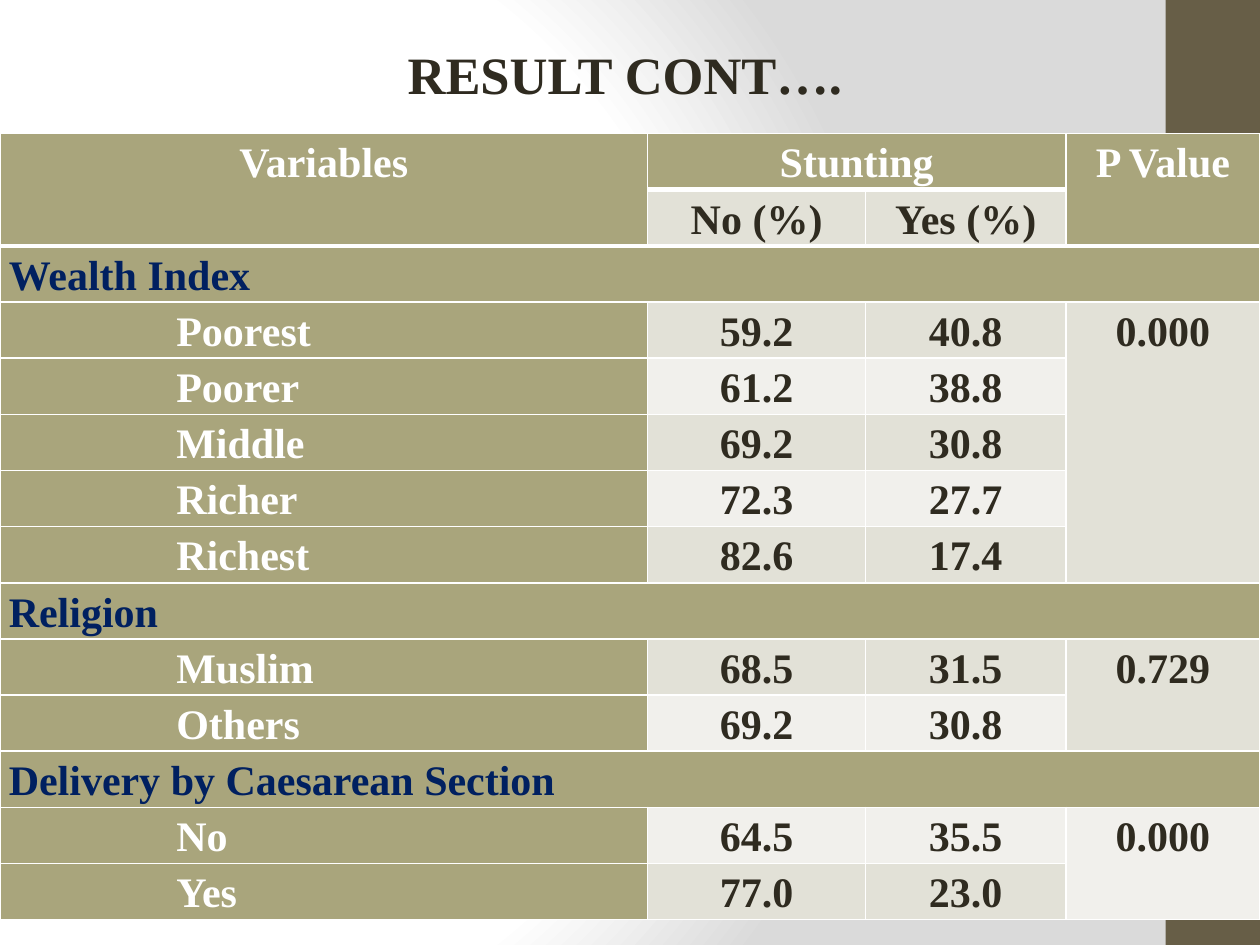
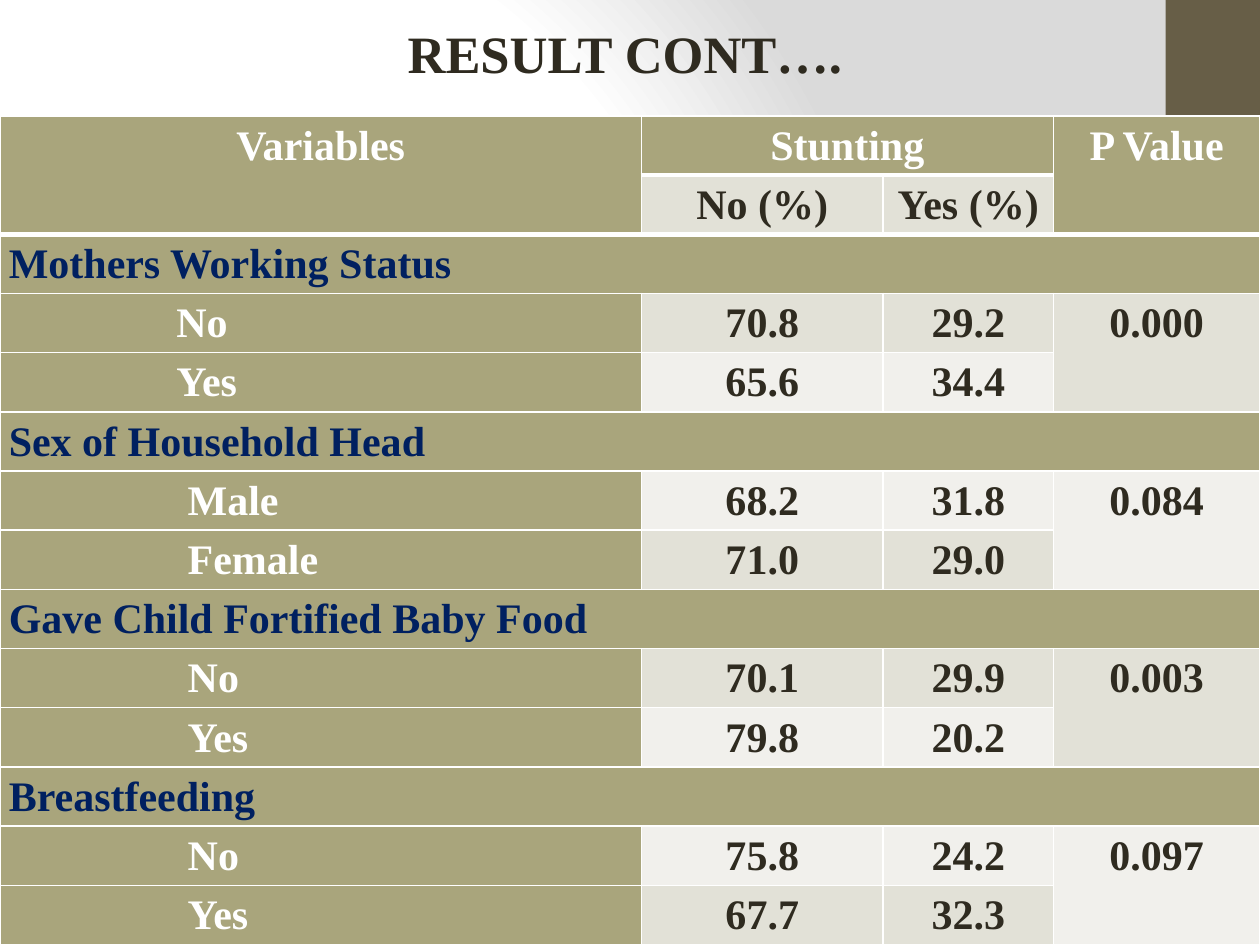
"""Builds two slides of stunting results, each a grouped table under a title."""
from dataclasses import dataclass

from lxml import etree
from pptx import Presentation
from pptx.dml.color import RGBColor
from pptx.enum.shapes import MSO_SHAPE
from pptx.enum.text import MSO_ANCHOR, PP_ALIGN
from pptx.oxml import parse_xml
from pptx.oxml.ns import nsdecls, qn
from pptx.util import Inches, Pt

TITLE = "RESULT CONT…."
HEADER = ("Variables", "Stunting", "P Value")
SUBHEADER = ("No (%)", "Yes (%)")

SLIDES = [
    {
        "title_top": 0.25, "table_top": 1.06, "row_height": 0.446,
        "columns": (5.14, 1.73, 1.59, 1.54),
        "groups": [
            ("Wealth Index", "0.000", 1.33, [
                ("Poorest", "59.2", "40.8"),
                ("Poorer", "61.2", "38.8"),
                ("Middle", "69.2", "30.8"),
                ("Richer", "72.3", "27.7"),
                ("Richest", "82.6", "17.4")]),
            ("Religion", "0.729", 1.33, [
                ("Muslim", "68.5", "31.5"),
                ("Others", "69.2", "30.8")]),
            ("Delivery by Caesarean Section", "0.000", 1.33, [
                ("No", "64.5", "35.5"),
                ("Yes", "77.0", "23.0")]),
        ],
    },
    {
        "title_top": 0.08, "table_top": 0.92, "row_height": 0.47,
        "columns": (5.09, 1.92, 1.35, 1.64),
        "groups": [
            ("Mothers Working Status", "0.000", 1.33, [
                ("No", "70.8", "29.2"),
                ("Yes", "65.6", "34.4")]),
            ("Sex of Household Head", "0.084", 1.42, [
                ("Male", "68.2", "31.8"),
                ("Female", "71.0", "29.0")]),
            ("Gave Child Fortified Baby Food", "0.003", 1.42, [
                ("No", "70.1", "29.9"),
                ("Yes", "79.8", "20.2")]),
            ("Breastfeeding", "0.097", 1.42, [
                ("No", "75.8", "24.2"),
                ("Yes", "67.7", "32.3")]),
        ],
    },
]


@dataclass(frozen=True)
class Theme:
    font: str = "Times New Roman"
    title_size: int = 30
    table_size: int = 24
    white: str = "FFFFFF"
    grey: str = "DADADA"
    dark: str = "2F2B20"
    navy: str = "002060"
    olive: str = "A9A57C"
    brown: str = "675E47"
    bands: tuple = ("F1F0EC", "E2E1D7")
    rule: int = 1
    header_rule: int = 3


T = Theme()
rgb = RGBColor.from_string


def write(tf, text, color=T.dark, size=T.table_size, align=PP_ALIGN.CENTER, indent=0, spacing=None):
    tf.word_wrap = True
    p = tf.paragraphs[0]
    p.alignment = align
    p.line_spacing = spacing
    if indent:
        pPr = p._p.get_or_add_pPr()
        pPr.set("marL", str(Inches(indent)))
        pPr.set("indent", "0")
    r = p.add_run()
    r.text = text
    r.font.name, r.font.size, r.font.bold = T.font, Pt(size), True
    r.font.color.rgb = rgb(color)


def set_background(master):
    master.background.fill.solid()
    solid = master.element.find(".//" + qn("p:bgPr")).find(qn("a:solidFill"))
    stops = "".join(
        f'<a:gs pos="{pos}000"><a:srgbClr val="{color}"/></a:gs>'
        for pos, color in ((0, T.white), (75, T.white), (100, T.grey)))
    solid.getparent().replace(solid, parse_xml(
        f'<a:gradFill {nsdecls("a")} rotWithShape="1"><a:gsLst>{stops}</a:gsLst><a:path path="circle">'
        '<a:fillToRect l="20000" t="50000" r="100000" b="50000"/></a:path></a:gradFill>'))


def add_band(s, prs):
    width = int(prs.slide_width * 0.075)
    sp = s.shapes.add_shape(MSO_SHAPE.RECTANGLE, prs.slide_width - width, 0, width, prs.slide_height)
    sp.shadow.inherit = False
    sp.fill.solid()
    sp.fill.fore_color.rgb = rgb(T.brown)
    sp.line.fill.background()


def add_title(s, top):
    tf = s.shapes.add_textbox(Inches(3), Inches(top), Inches(3.92), Inches(0.67)).text_frame
    tf.vertical_anchor = MSO_ANCHOR.MIDDLE
    write(tf, TITLE, size=T.title_size)


def style_cell(cell, row, fill):
    cell.margin_left = cell.margin_right = Inches(0.07)
    cell.margin_top = cell.margin_bottom = 0
    tcPr = cell._tc.get_or_add_tcPr()
    widths = {"L": T.rule, "R": T.rule,
              "T": T.header_rule if row in (1, 2) else T.rule,
              "B": T.header_rule if row < 2 else T.rule}
    for side, width in widths.items():
        ln = etree.SubElement(tcPr, qn(f"a:ln{side}"), w=str(Pt(width)))
        etree.SubElement(etree.SubElement(ln, qn("a:solidFill")), qn("a:srgbClr"), val=T.white)
    cell.fill.solid()
    cell.fill.fore_color.rgb = rgb(fill)


def add_results(s, top, row_height, columns, groups):
    n_rows = 2 + sum(1 + len(items) for _, _, _, items in groups)
    table = s.shapes.add_table(n_rows, len(columns), 0, Inches(top), Inches(sum(columns)),
                               Inches(row_height * n_rows)).table
    table.first_row = table.horz_banding = False
    for column, width in zip(table.columns, columns):
        column.width = Inches(width)
    for row in table.rows:
        row.height = Inches(row_height)

    def put(row, col, text, fill=T.olive, rows=1, cols=1, **style):
        last_row, last_col = row + rows - 1, col + cols - 1
        for i in range(row, last_row + 1):
            for j in range(col, last_col + 1):
                style_cell(table.cell(i, j), i, fill)
        cell = table.cell(row, col)
        if rows * cols > 1:
            cell.merge(table.cell(last_row, last_col))
        write(cell.text_frame, text, spacing=1.15, **style)

    for col, text, rows, cols in zip((0, 1, 3), HEADER, (2, 1, 2), (1, 2, 1)):
        put(0, col, text, rows=rows, cols=cols, color=T.white)
    for col, text in enumerate(SUBHEADER, 1):
        put(1, col, text, T.bands[1])
    row = 2
    for name, p_value, indent, items in groups:
        put(row, 0, name, cols=len(columns), color=T.navy, align=PP_ALIGN.LEFT)
        row += 1
        put(row, 3, p_value, T.bands[row % 2], rows=len(items))
        for label, *shares in items:
            put(row, 0, label, color=T.white, align=PP_ALIGN.LEFT, indent=indent)
            for col, share in enumerate(shares, 1):
                put(row, col, share, T.bands[row % 2])
            row += 1


def main():
    prs = Presentation()
    prs.slide_width, prs.slide_height = Inches(10), Inches(7.5)
    set_background(prs.slide_master)
    for page in SLIDES:
        s = prs.slides.add_slide(prs.slide_layouts[6])
        add_band(s, prs)
        add_results(s, page["table_top"], page["row_height"], page["columns"], page["groups"])
        add_title(s, page["title_top"])
    prs.save("out.pptx")


if __name__ == "__main__":
    main()
